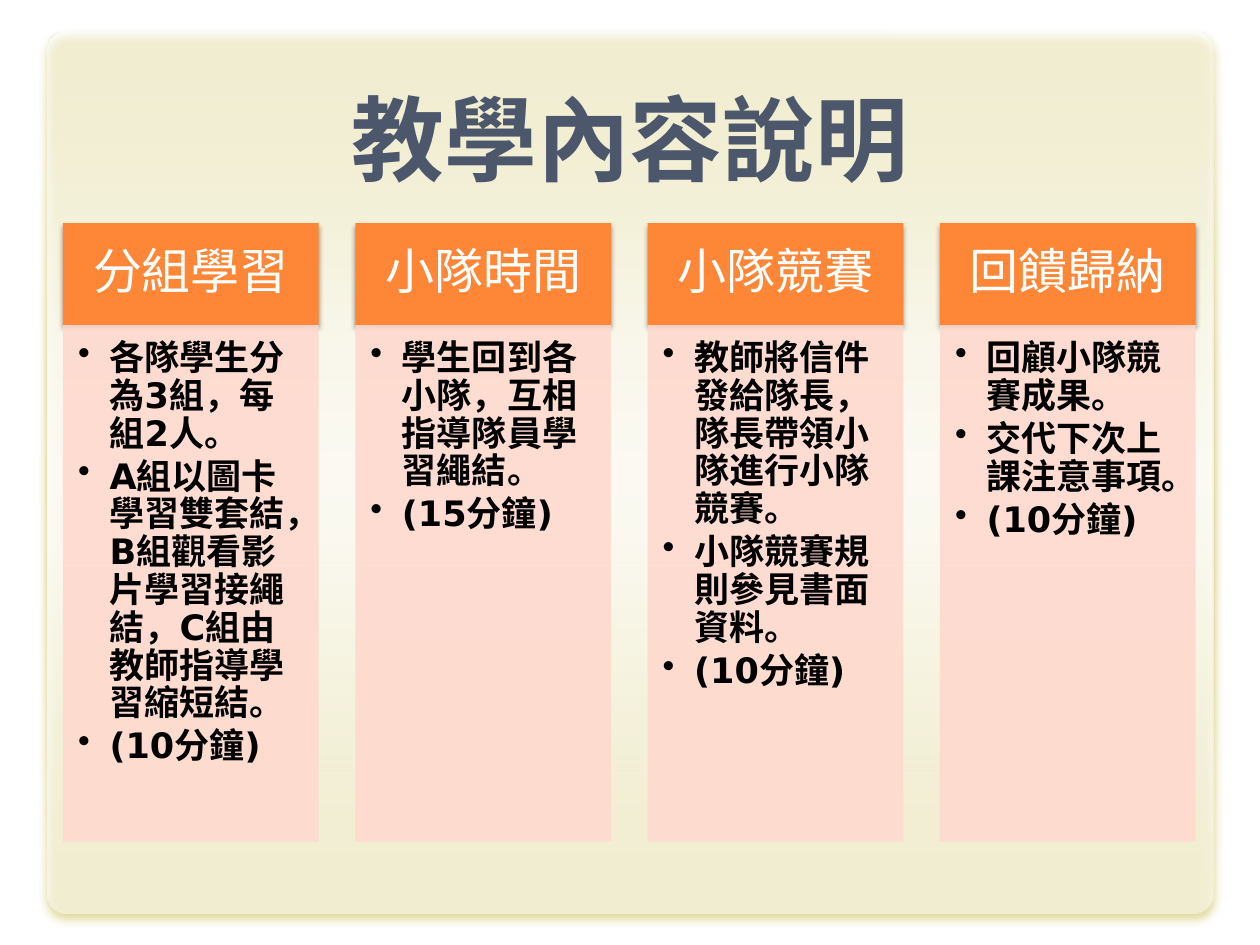
import pptx
import pptx.util
import pptx.dml.color
import pptx.enum.shapes
import pptx.enum.text
import pptx.oxml
import pptx.oxml.ns

Inches, Pt = pptx.util.Inches, pptx.util.Pt
PP_ALIGN, ANCHOR = pptx.enum.text.PP_ALIGN, pptx.enum.text.MSO_ANCHOR
SHAPE = pptx.enum.shapes.MSO_SHAPE
NAMESPACE = pptx.oxml.ns.nsdecls("a")

THEME = {
    "title": "4C576B", "header": "FE8637", "header_text": "FFFFFF",
    "body": "FFD9CE", "body_text": "000000",
    "panel": "FFFFFF", "panel_shadow": "C3B131", "header_shadow": "1A0000",
    "latin": "DejaVu Sans", "east_asian": "Noto Sans CJK SC",
    "title_size": 53, "header_size": 28, "body_size": 20,
}

# Column grid, in inches
LEFT, COLUMN_WIDTH, COLUMN_STEP = 0.5, 2.03, 2.32
HEADER_TOP, HEADER_HEIGHT, BODY_HEIGHT = 1.77, 0.81, 4.1

COLUMNS = [
    ("分組學習", ["各隊學生分為3組，每組2人。",
              "A組以圖卡學習雙套結，B組觀看影片學習接繩結，C組由教師指導學習縮短結。",
              "(10分鐘)"]),
    ("小隊時間", ["學生回到各小隊，互相指導隊員學習繩結。", "(15分鐘)"]),
    ("小隊競賽", ["教師將信件發給隊長，隊長帶領小隊進行小隊競賽。",
              "小隊競賽規則參見書面資料。", "(10分鐘)"]),
    ("回饋歸納", ["回顧小隊競賽成果。", "交代下次上課注意事項。", "(10分鐘)"]),
]


def add_xml(parent, *fragments):
    """Append drawing elements, written without their namespace prefix declaration."""
    for fragment in fragments:
        tag, rest = fragment[:-2].split(" ", 1) if fragment.endswith("/>") and fragment.count("<") == 1 \
            else fragment.split(">", 1)[0].split(" ", 1)
        parent.append(pptx.oxml.parse_xml(fragment.replace(tag, f"{tag} {NAMESPACE}", 1)))


def add_text(paragraph, text, role, latin, bold):
    """Add one run in the type size and colour of its role."""
    run = paragraph.add_run()
    run.text = text
    run.font.name, run.font.bold = latin, bold
    run.font.size = Pt(THEME[f"{role}_size"])
    color = THEME["title"] if role == "title" else THEME[f"{role}_text"]
    run.font.color.rgb = pptx.dml.color.RGBColor.from_string(color)
    add_xml(run.font._element, f'<a:ea typeface="{THEME["east_asian"]}"/>')


SHADOW = ('<a:effectLst dummy=""><a:outerShdw blurRad="{}" dist="{}" dir="5400000" rotWithShape="0">'
          '<a:srgbClr val="{}"><a:alpha val="{}"/></a:srgbClr></a:outerShdw></a:effectLst>'
          ).replace(' dummy=""', ' ')

presentation = pptx.Presentation()
presentation.slide_width, presentation.slide_height = Inches(10), Inches(7.5)
slide = presentation.slides.add_slide(presentation.slide_layouts[6])

# Background panel: translucent white that lets its tinted shadow through
panel = slide.shapes.add_shape(SHAPE.ROUNDED_RECTANGLE, Inches(0.38), Inches(0.25),
                               Inches(9.25), Inches(7))
panel.adjustments[0] = 0.022
panel.line.fill.background()
stops = "".join(
    f'<a:gs pos="{position}000"><a:srgbClr val="{THEME["panel"]}">'
    f'<a:alpha val="{opacity}000"/></a:srgbClr></a:gs>'
    for position, opacity in [(0, 50), (35, 87), (50, 92), (60, 89), (100, 55)])
gradient = pptx.oxml.parse_xml(
    f'<a:gradFill {NAMESPACE} rotWithShape="1"><a:gsLst>{stops}</a:gsLst>'
    '<a:lin ang="5400000" scaled="0"/></a:gradFill>')
panel.line._get_or_add_ln().addprevious(gradient)
add_xml(panel._element.spPr, SHADOW.format(Pt(5), Pt(3.6), THEME["panel_shadow"], 90000))

# Title
title = slide.shapes.add_textbox(Inches(LEFT), Inches(0.33), Inches(9), Inches(1.25))
title.text_frame.word_wrap = True
title.text_frame.vertical_anchor = ANCHOR.BOTTOM
paragraph = title.text_frame.paragraphs[0]
paragraph.alignment = PP_ALIGN.CENTER
add_text(paragraph, "教學內容說明", "title", THEME["east_asian"], True)

# Four columns, each a header above a bulleted body
for index, (heading, points) in enumerate(COLUMNS):
    left = LEFT + index * COLUMN_STEP
    parts = [
        ("header", HEADER_TOP, HEADER_HEIGHT, [heading], (0.22, 0.12, 0.22, 0.12)),
        ("body", HEADER_TOP + HEADER_HEIGHT, BODY_HEIGHT, points, (0.12, 0.12, 0.16, 0.17)),
    ]
    for role, top, height, lines, insets in parts:
        is_header = role == "header"
        shape = slide.shapes.add_shape(SHAPE.RECTANGLE, Inches(left), Inches(top),
                                       Inches(COLUMN_WIDTH), Inches(height))
        shape.fill.solid()
        shape.fill.fore_color.rgb = pptx.dml.color.RGBColor.from_string(THEME[role])
        shape.line.fill.background()
        if is_header:
            add_xml(shape._element.spPr,
                    SHADOW.format(Pt(3.1), Pt(2), THEME["header_shadow"], 40000))
        else:
            shape.shadow.inherit = False
            add_xml(shape._element.spPr.find(".//" + pptx.oxml.ns.qn("a:srgbClr")),
                    '<a:alpha val="90000"/>')

        frame = shape.text_frame
        frame.word_wrap = True
        frame.vertical_anchor = ANCHOR.MIDDLE if is_header else ANCHOR.TOP
        (frame.margin_left, frame.margin_top,
         frame.margin_right, frame.margin_bottom) = map(Inches, insets)
        for number, line in enumerate(lines):
            paragraph = frame.add_paragraph() if number else frame.paragraphs[0]
            paragraph.alignment = PP_ALIGN.CENTER if is_header else PP_ALIGN.LEFT
            paragraph.line_spacing = 0.9
            properties = paragraph._element.get_or_add_pPr()
            spacing = 35000 if is_header else 15000
            add_xml(properties, f'<a:spcAft ><a:spcPct val="{spacing}"/></a:spcAft>')
            if not is_header:
                paragraph.level = 1
                properties.set("marL", str(Inches(0.25)))
                properties.set("indent", str(-Inches(0.25)))
                add_xml(properties, '<a:buChar char="•"/>')
            add_text(paragraph, line, role,
                     THEME["east_asian" if is_header else "latin"], not is_header)

presentation.save("out.pptx")
